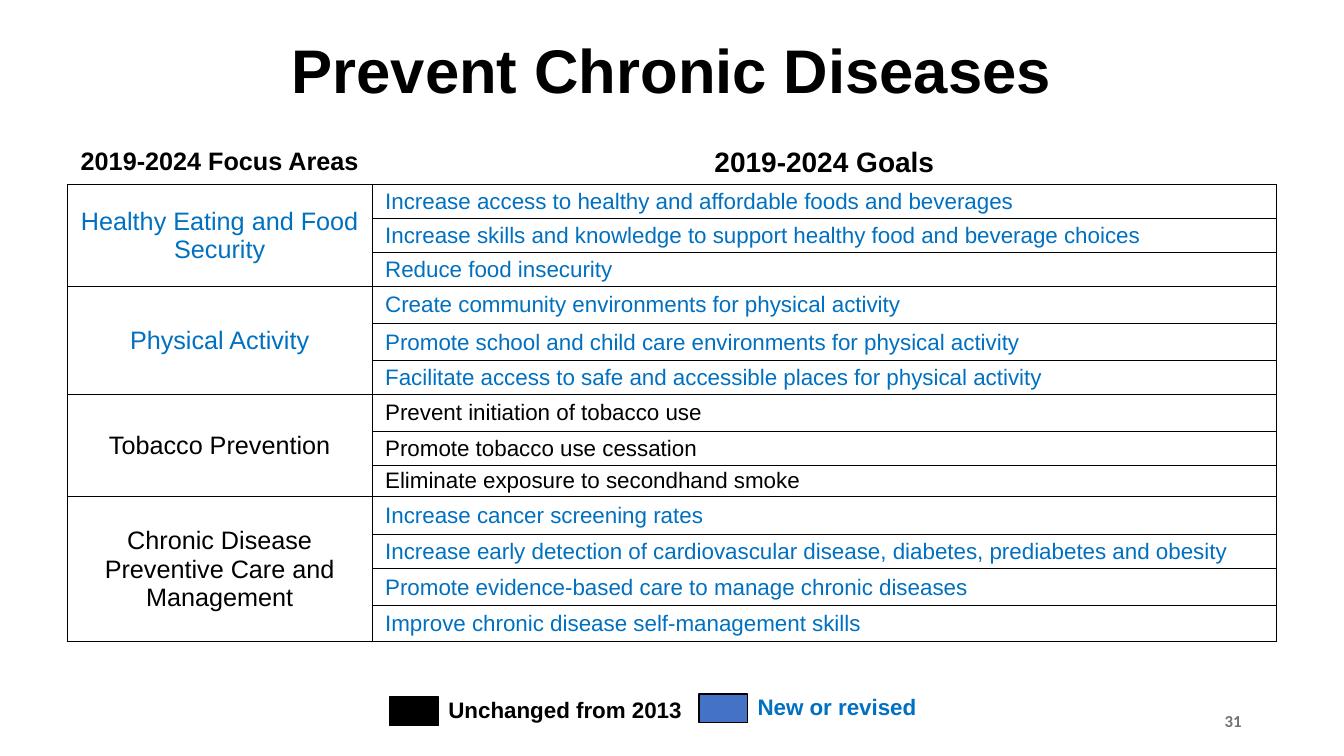
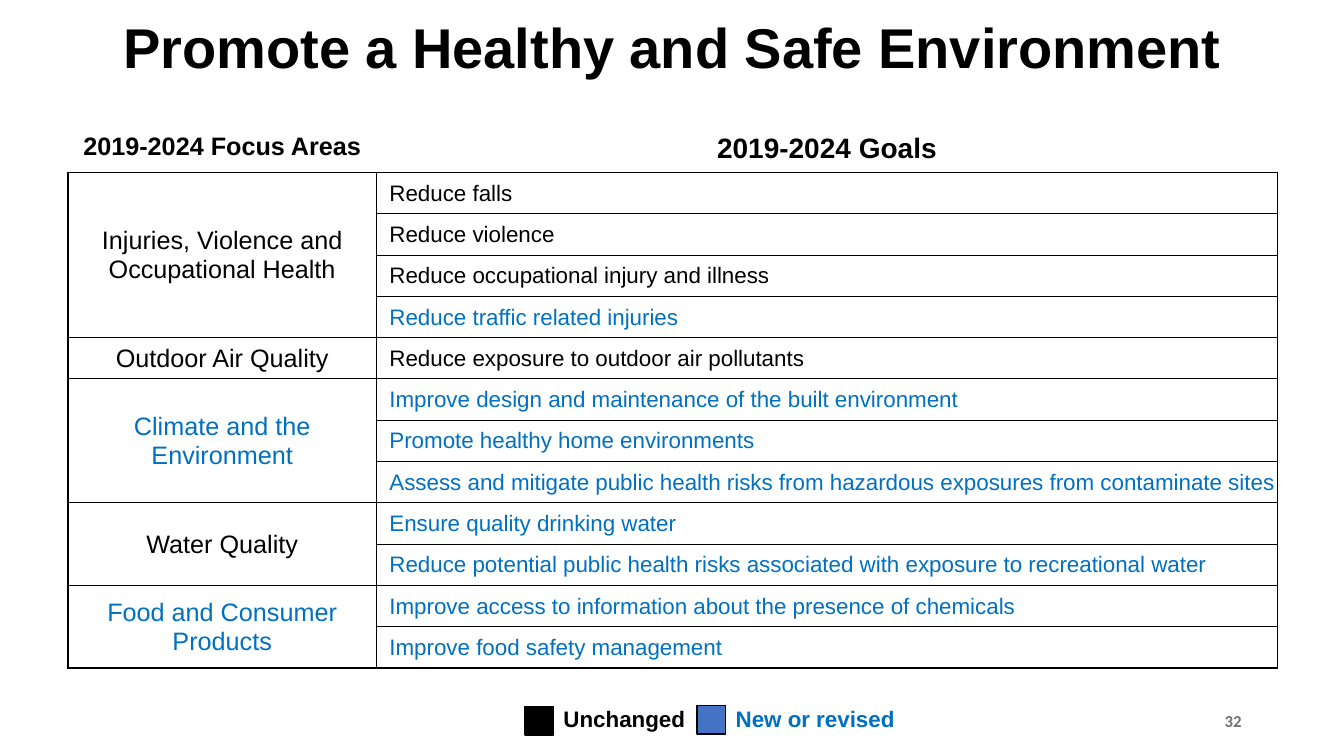
from dataclasses import dataclass

import pptx
import pptx.dml.color
import pptx.enum.shapes
import pptx.enum.text
import pptx.oxml
import pptx.oxml.ns
import pptx.util

ALIGN = pptx.enum.text.PP_ALIGN
ANCHOR = pptx.enum.text.MSO_ANCHOR

# Slide grid: 160 columns by 90 rows of square units
COLS, ROWS = 160, 90
UNIT = pptx.util.Inches(7.5) / ROWS

BLACK, BLUE, WHITE = "000000", "0070C0", "FFFFFF"
SWATCH_BLUE, GREY = "4472C4", "767171"
THIN = 0.5
PLAIN_TABLE = "{2D5ABB26-0587-4C30-8999-92F81FD0307C}"


@dataclass
class Area:
    name: str
    color: str
    unchanged: tuple[str, ...] = ()
    revised: tuple[str, ...] = ()

    def goals(self) -> list[tuple[str, str]]:
        return ([(goal, BLACK) for goal in self.unchanged]
                + [(goal, BLUE) for goal in self.revised])


@dataclass
class Key:
    label: str
    x: float
    y: float
    fill: str
    color: str


@dataclass
class Page:
    number: int
    title: str
    title_rows: float
    title_size: int
    left: float
    top: float
    focus_cols: float
    row_heights: list[float]
    edge: float  # width of the lines around each focus area
    areas: list[Area]
    swatch_cols: float
    keys: list[Key]


PAGES = [
    Page(
        31, "Prevent Chronic Diseases", 17.4, 44, 8, 17.4, 36.3,
        [4.6, 3.95, 4.05, 4.05, 4.4, 4.5, 3.95, 4.5, 3.95, 3.7, 4.6, 4.05, 4.4, 4.3],
        THIN,
        [
            Area("Healthy Eating and Food Security", BLUE, revised=(
                "Increase access to healthy and affordable foods and beverages",
                "Increase skills and knowledge to support healthy food and beverage choices",
                "Reduce food insecurity")),
            Area("Physical Activity", BLUE, revised=(
                "Create community environments for physical activity",
                "Promote school and child care environments for physical activity",
                "Facilitate access to safe and accessible places for physical activity")),
            Area("Tobacco Prevention", BLACK, unchanged=(
                "Prevent initiation of tobacco use",
                "Promote tobacco use cessation",
                "Eliminate exposure to secondhand smoke")),
            Area("Chronic Disease Preventive Care and Management", BLACK, revised=(
                "Increase cancer screening rates",
                "Increase early detection of cardiovascular disease, diabetes, "
                "prediabetes and obesity",
                "Promote evidence-based care to manage chronic diseases",
                "Improve chronic disease self-management skills")),
        ],
        5.8,
        [Key("Unchanged from 2013", 46.4, 83, BLACK, BLACK),
         Key("New or revised", 83.2, 82.6, SWATCH_BLUE, BLUE)],
    ),
    Page(
        32, "Promote a Healthy and Safe Environment", 12, 40, 8.1, 15.7, 36.7,
        [4.8] + [4.92] * 12,
        1,
        [
            Area("Injuries, Violence and Occupational Health", BLACK,
                 unchanged=("Reduce falls", "Reduce violence",
                            "Reduce occupational injury and illness"),
                 revised=("Reduce traffic related injuries",)),
            Area("Outdoor Air Quality", BLACK,
                 unchanged=("Reduce exposure to outdoor air pollutants",)),
            Area("Climate and the Environment", BLUE, revised=(
                "Improve design and maintenance of the built environment",
                "Promote healthy home environments",
                "Assess and mitigate public health risks from hazardous exposures "
                "from contaminate sites")),
            Area("Water Quality", BLACK, revised=(
                "Ensure quality drinking water",
                "Reduce potential public health risks associated with exposure "
                "to recreational water")),
            Area("Food and Consumer Products", BLUE, revised=(
                "Improve access to information about the presence of chemicals",
                "Improve food safety management")),
        ],
        3.4,
        [Key("Unchanged", 62.5, 84.1, BLACK, BLACK),
         Key("New or revised", 83, 84, SWATCH_BLUE, BLUE)],
    ),
]


# Helpers
def units(n: float) -> int:
    return round(n * UNIT)


def rgb(color: str) -> pptx.dml.color.RGBColor:
    return pptx.dml.color.RGBColor.from_string(color)


def write(tf, text: str, *, size: float = 16, color: str = BLACK, bold: bool = False,
          align=ALIGN.LEFT, font: str = "Arial", spacing: float = 1.0) -> None:
    p = tf.paragraphs[0]
    p.alignment = align
    p.line_spacing = spacing
    r = p.add_run()
    r.text = text
    r.font.name = font
    r.font.size = pptx.util.Pt(size)
    r.font.bold = bold
    r.font.color.rgb = rgb(color)


def add_text(slide, x: float, y: float, w: float, h: float, text: str,
             anchor=ANCHOR.TOP, **fmt) -> None:
    tf = slide.shapes.add_textbox(units(x), units(y), units(w), units(h)).text_frame
    tf.word_wrap = True
    tf.vertical_anchor = anchor
    write(tf, text, **fmt)


def set_borders(cell, **widths: float) -> None:
    """Draw the sides L, R, T and B that are given, in that order."""
    tc_pr = cell._tc.get_or_add_tcPr()
    for i, (side, width) in enumerate(widths.items()):
        tc_pr.insert(i, pptx.oxml.parse_xml(
            f'<a:ln{side} {pptx.oxml.ns.nsdecls("a")} w="{pptx.util.Pt(width)}">'
            f'<a:solidFill><a:srgbClr val="{BLACK}"/></a:solidFill></a:ln{side}>'))


# Parts of a slide
def add_title(slide, page: Page) -> None:
    sp = slide.shapes.title
    sp.left, sp.top = 0, 0
    sp.width, sp.height = units(COLS), units(page.title_rows)
    tf = sp.text_frame
    tf.word_wrap = True
    tf.auto_size = pptx.enum.text.MSO_AUTO_SIZE.NONE
    tf.vertical_anchor = ANCHOR.MIDDLE
    write(tf, page.title, size=page.title_size, bold=True, align=ALIGN.CENTER, spacing=0.9)


def add_goal_table(slide, page: Page) -> None:
    width = 144
    heights = page.row_heights
    frame = slide.shapes.add_table(len(heights), 2, units(page.left), units(page.top),
                                   units(width), units(sum(heights)))
    table = frame.table
    table.first_row = table.horz_banding = False
    frame._element.find(".//" + pptx.oxml.ns.qn("a:tableStyleId")).text = PLAIN_TABLE
    for column, cols in zip(table.columns, (page.focus_cols, width - page.focus_cols)):
        column.width = units(cols)
    for row, height in zip(table.rows, heights):
        row.height = units(height)
    for cell in table.iter_cells():
        cell.margin_left = cell.margin_right = cell.margin_top = pptx.util.Inches(0.01)
        cell.margin_bottom = 0
        cell.vertical_anchor = ANCHOR.MIDDLE

    # Header row
    for col, (text, size) in enumerate((("2019-2024 Focus Areas", 18),
                                        ("2019-2024 Goals", 20))):
        cell = table.cell(0, col)
        cell.vertical_anchor = ANCHOR.TOP
        set_borders(cell, B=page.edge)
        cell.fill.background()
        write(cell.text_frame, text, size=size, bold=True, align=ALIGN.CENTER)

    # One merged focus cell beside its goals
    row = 1
    for area in page.areas:
        goals = area.goals()
        last = len(goals) - 1
        for i, (text, color) in enumerate(goals):
            focus, goal = table.cell(row + i, 0), table.cell(row + i, 1)
            top = page.edge if i == 0 else THIN
            bottom = page.edge if i == last else THIN
            set_borders(focus, L=page.edge, R=THIN, T=page.edge, B=page.edge)
            set_borders(goal, L=THIN, R=page.edge, T=top, B=bottom)
            focus.fill.background()
            goal.fill.solid()
            goal.fill.fore_color.rgb = rgb(WHITE)
            goal.margin_left = pptx.util.Inches(0.13)
            write(goal.text_frame, text, color=color)
        focus = table.cell(row, 0)
        if last:
            focus.merge(table.cell(row + last, 0))
        write(focus.text_frame, area.name, size=18, color=area.color, align=ALIGN.CENTER)
        row += len(goals)


def add_key(slide, key: Key, swatch_cols: float) -> None:
    sp = slide.shapes.add_shape(pptx.enum.shapes.MSO_SHAPE.RECTANGLE, units(key.x),
                                units(key.y), units(swatch_cols), units(3.4))
    sp.shadow.inherit = False
    sp.fill.solid()
    sp.fill.fore_color.rgb = rgb(key.fill)
    sp.line.color.rgb = rgb(BLACK)
    sp.line.width = pptx.util.Pt(1)
    add_text(slide, key.x + swatch_cols, key.y - 0.7, 32, 4.4, key.label,
             color=key.color, bold=True)


def main() -> None:
    prs = pptx.Presentation()
    prs.slide_width, prs.slide_height = units(COLS), units(ROWS)
    for page in PAGES:
        slide = prs.slides.add_slide(prs.slide_layouts[5])
        add_title(slide, page)
        add_goal_table(slide, page)
        for key in page.keys:
            add_key(slide, key, page.swatch_cols)
        add_text(slide, 113, 83.4, 36, 4.8, str(page.number), anchor=ANCHOR.MIDDLE,
                 size=12, color=GREY, bold=True, align=ALIGN.RIGHT, font="Calibri")
    prs.save("out.pptx")


if __name__ == "__main__":
    main()
